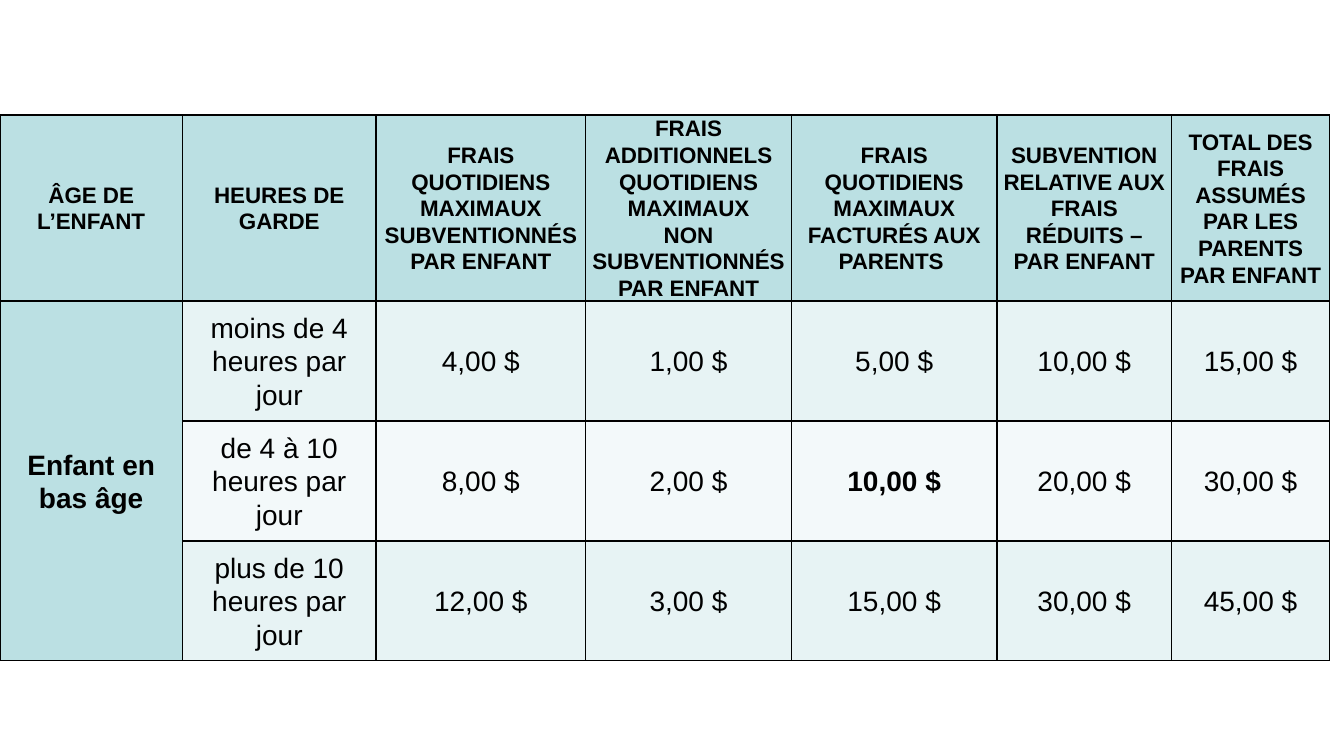
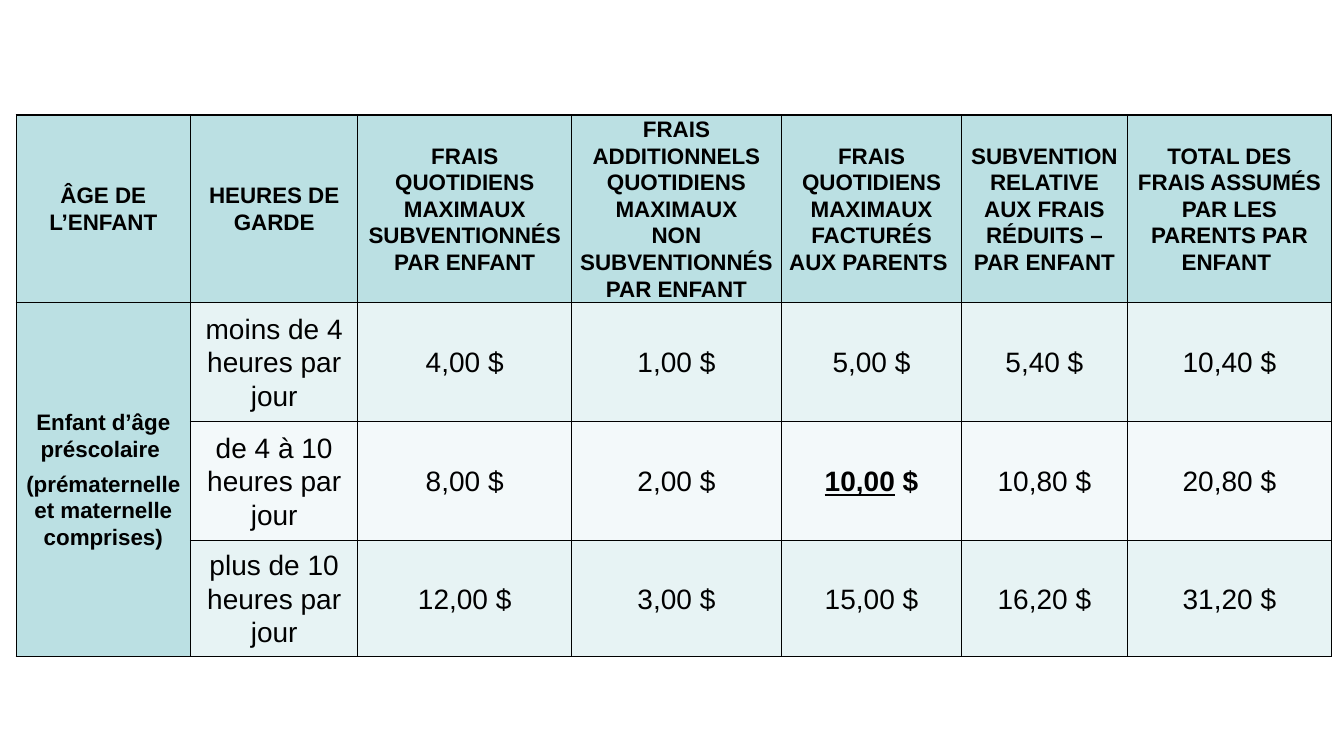
from dataclasses import dataclass

from lxml import etree
from pptx import Presentation
from pptx.dml.color import RGBColor
from pptx.enum.text import MSO_ANCHOR, PP_ALIGN
from pptx.oxml.ns import qn
from pptx.util import Inches, Pt

CENTER = PP_ALIGN.CENTER
MIDDLE = MSO_ANCHOR.MIDDLE

SLIDE_WIDTH, SLIDE_HEIGHT = 13.33, 7.5
BLANK_LAYOUT = 6
TABLE_TOP = 1.14
FONT = "Arial"
BLACK = "000000"
HEADER_FILL = "BBE0E3"
BAND_FILLS = ("E7F3F4", "F3F9FA")
HEADER_SIZE, BODY_SIZE = 16, 20
PARAGRAPH_GAP = 6
CURRENCY = " $"

HEADINGS = (
    "ÂGE DE L’ENFANT",
    "HEURES DE GARDE",
    "FRAIS QUOTIDIENS MAXIMAUX SUBVENTIONNÉS PAR ENFANT",
    "FRAIS ADDITIONNELS\nQUOTIDIENS MAXIMAUX\nNON SUBVENTIONNÉS PAR ENFANT",
    "FRAIS QUOTIDIENS MAXIMAUX FACTURÉS AUX PARENTS ",
    "SUBVENTION RELATIVE AUX FRAIS RÉDUITS – PAR ENFANT",
    "TOTAL DES FRAIS ASSUMÉS PAR LES PARENTS PAR ENFANT ",
)
HOURS = (
    "moins de 4 heures par jour",
    "de 4 à 10 heures par jour",
    "plus de 10 heures par jour",
)
SUBSIDISED_FEES = (4, 8, 12)
ADDITIONAL_FEES = (1, 2, 3)
KEY_FEE = (2, 4)  # row and column of the emphasised amount


@dataclass(frozen=True)
class AgeLine:
    text: str
    space_after: int = PARAGRAPH_GAP


@dataclass(frozen=True)
class FeeTable:
    left: float
    columns: tuple[float, ...]
    rows: tuple[float, ...]
    age_group: tuple[AgeLine, ...]
    age_size: int
    reduction_subsidies: tuple[float, ...]
    underline_key_fee: bool = False


FEE_TABLES = (
    FeeTable(
        left=0,
        columns=(1.81, 1.92, 2.08, 2.04, 2.04, 1.73, 1.57),
        rows=(1.77, 1.19, 1.19, 1.19),
        age_group=(AgeLine("Enfant en bas âge"),),
        age_size=BODY_SIZE,
        reduction_subsidies=(10, 20, 30),
    ),
    FeeTable(
        left=0.16,
        columns=(1.73, 1.66, 2.12, 2.08, 1.79, 1.64, 2.03),
        rows=(1.86, 1.18, 1.18, 1.15),
        age_group=(
            AgeLine("Enfant d’âge", space_after=0),
            AgeLine("préscolaire "),
            AgeLine("(prématernelle et maternelle comprises)"),
        ),
        age_size=HEADER_SIZE,
        reduction_subsidies=(5.4, 10.8, 16.2),
        underline_key_fee=True,
    ),
)


def rgb(code: str) -> RGBColor:
    return RGBColor.from_string(code)


def write_text(paragraph, text: str, *, size: int = BODY_SIZE, bold: bool = False,
               underline: bool = False, space_after: int = PARAGRAPH_GAP) -> None:
    """Append formatted text to a paragraph, breaking lines at each newline."""
    paragraph.alignment = CENTER
    paragraph.line_spacing = 1.07
    paragraph.space_before = Pt(0)
    paragraph.space_after = Pt(space_after)
    for index, line in enumerate(text.split("\n")):
        if index:
            paragraph.add_line_break()
        run = paragraph.add_run()
        run.text = line
        run.font.name = FONT
        run.font.size = Pt(size)
        run.font.bold = bold
        run.font.underline = underline
        run.font.color.rgb = rgb(BLACK)


def style_cell(cell, fill: str) -> None:
    cell.vertical_anchor = MIDDLE
    cell.margin_left = cell.margin_right = Inches(0.06)
    cell.margin_top = cell.margin_bottom = 0
    properties = cell._tc.get_or_add_tcPr()
    for side in ("a:lnL", "a:lnR", "a:lnT", "a:lnB"):
        border = etree.SubElement(properties, qn(side), w=str(Pt(1)))
        paint = etree.SubElement(border, qn("a:solidFill"))
        etree.SubElement(paint, qn("a:srgbClr"), val=BLACK)
    cell.fill.solid()
    cell.fill.fore_color.rgb = rgb(fill)


def write_age_group(cell, fees: FeeTable) -> None:
    frame = cell.text_frame
    for index, line in enumerate(fees.age_group):
        paragraph = frame.add_paragraph() if index else frame.paragraphs[0]
        write_text(paragraph, line.text, size=fees.age_size, bold=True,
                   space_after=line.space_after)


def write_amount(cell, amount: float, *, bold: bool, underline: bool) -> None:
    """Write a French-style amount; only its digits may be underlined."""
    paragraph = cell.text_frame.paragraphs[0]
    write_text(paragraph, f"{amount:.2f}".replace(".", ","), bold=bold, underline=underline)
    write_text(paragraph, CURRENCY, bold=bold)


def add_fee_table(slide, fees: FeeTable) -> None:
    table = slide.shapes.add_table(
        len(fees.rows), len(fees.columns), Inches(fees.left), Inches(TABLE_TOP),
        Inches(sum(fees.columns)), Inches(sum(fees.rows))).table
    table.first_row = table.horz_banding = False
    for column, width in zip(table.columns, fees.columns):
        column.width = Inches(width)
    for row, height in zip(table.rows, fees.rows):
        row.height = Inches(height)

    for row in range(len(fees.rows)):
        for column in range(len(fees.columns)):
            is_heading = row == 0 or column == 0
            fill = HEADER_FILL if is_heading else BAND_FILLS[(row - 1) % 2]
            style_cell(table.cell(row, column), fill)

    for column, heading in enumerate(HEADINGS):
        write_text(table.cell(0, column).text_frame.paragraphs[0], heading,
                   size=HEADER_SIZE, bold=True)

    age_cell = table.cell(1, 0)
    age_cell.merge(table.cell(len(HOURS), 0))
    write_age_group(age_cell, fees)

    daily_fees = zip(HOURS, SUBSIDISED_FEES, ADDITIONAL_FEES, fees.reduction_subsidies)
    for row, (hours, subsidised, additional, reduction) in enumerate(daily_fees, start=1):
        write_text(table.cell(row, 1).text_frame.paragraphs[0], hours)
        billed = subsidised + additional
        amounts = (subsidised, additional, billed, reduction, billed + reduction)
        for column, amount in enumerate(amounts, start=2):
            is_key = (row, column) == KEY_FEE
            write_amount(table.cell(row, column), amount, bold=is_key,
                         underline=is_key and fees.underline_key_fee)


def main() -> None:
    deck = Presentation()
    deck.slide_width = Inches(SLIDE_WIDTH)
    deck.slide_height = Inches(SLIDE_HEIGHT)
    for fees in FEE_TABLES:
        add_fee_table(deck.slides.add_slide(deck.slide_layouts[BLANK_LAYOUT]), fees)
    deck.save("out.pptx")


if __name__ == "__main__":
    main()
